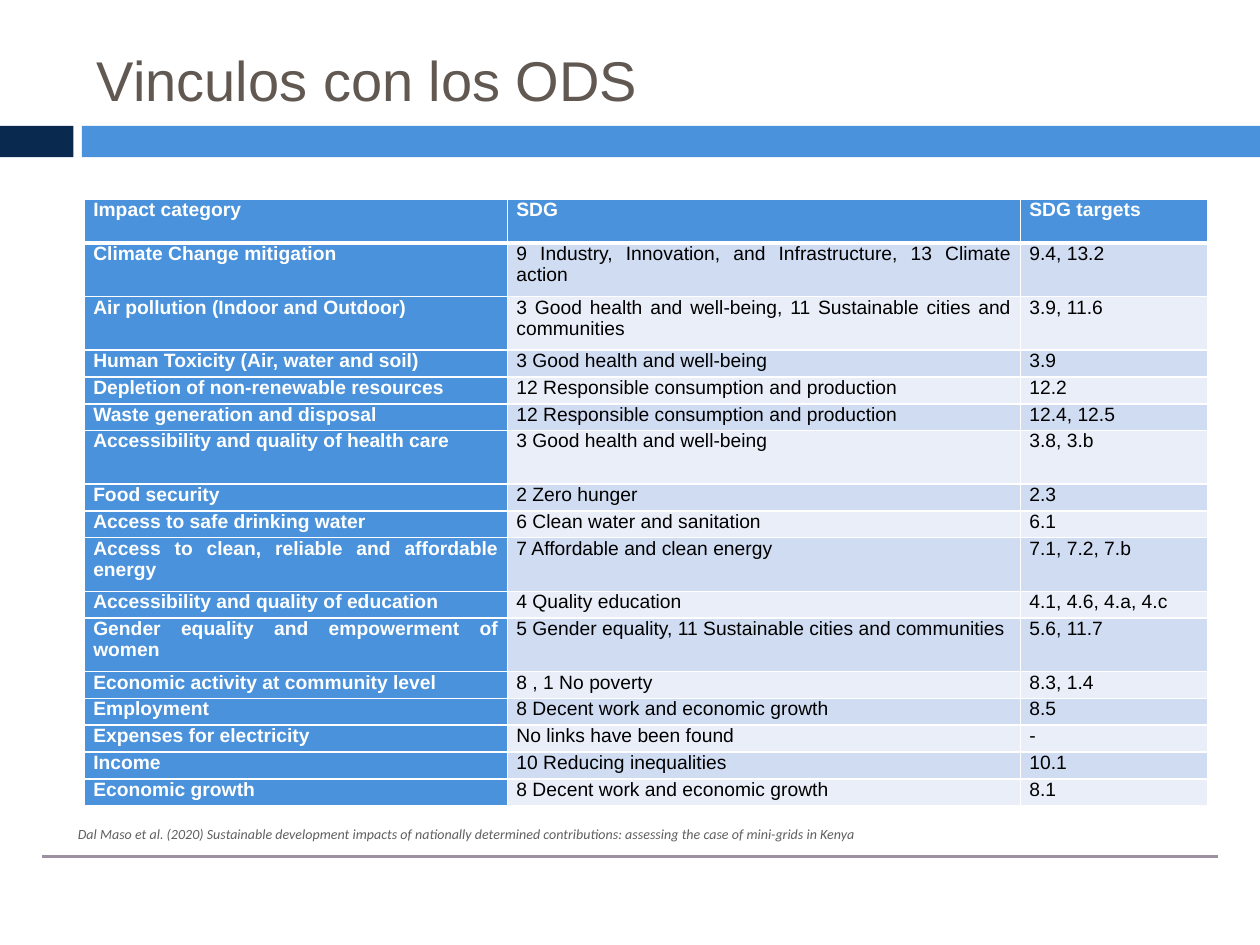
"""Build a slide that links impact categories to the SDGs and their targets."""
import pptx
import pptx.dml.color
import pptx.enum.shapes
import pptx.enum.text
import pptx.oxml
import pptx.oxml.ns
import pptx.util

Cm = pptx.util.Cm
Pt = pptx.util.Pt
Align = pptx.enum.text.PP_ALIGN
Fit = pptx.enum.text.MSO_AUTO_SIZE

hues = {
    "navy": "09294E", "blue": "4A92DB", "rule": "9D90A0", "title": "625852",
    "note": "5F5F5F", "white": "FFFFFF", "black": "000000",
    "odd": "D0DCF1", "even": "E9EEF8",
}


def tint(name):
    return pptx.dml.color.RGBColor.from_string(hues[name])


def write(frame, text, size=11, face="Arial", hue="black", bold=False,
          slant=False, align=Align.LEFT):
    frame.word_wrap = True
    para = frame.paragraphs[0]
    para.alignment = align
    run = para.add_run()
    run.text = text
    font = run.font
    font.size, font.name, font.bold, font.italic = Pt(size), face, bold, slant
    font.color.rgb = tint(hue)


deck = pptx.Presentation()
deck.slide_width, deck.slide_height = Cm(25.4), Cm(19.05)
slide = deck.slides.add_slide(deck.slide_layouts[5])
shapes = slide.shapes

for left, width, hue in [(0, 1.48, "navy"), (1.65, 23.75, "blue")]:
    bar = shapes.add_shape(pptx.enum.shapes.MSO_SHAPE.RECTANGLE,
                           Cm(left), Cm(2.54), Cm(width), Cm(0.63))
    bar.shadow.inherit = False
    bar.fill.solid()
    bar.fill.fore_color.rgb = tint(hue)
    bar.line.fill.background()

rule = shapes.add_connector(pptx.enum.shapes.MSO_CONNECTOR.STRAIGHT,
                            Cm(0.85), Cm(17.26), Cm(24.55), Cm(17.26))
rule.line.color.rgb = tint("rule")
rule.line.width = Pt(1.75)
rule._element.spPr.append(pptx.oxml.parse_xml(
    f'<a:effectLst {pptx.oxml.ns.nsdecls("a")}/>'))

title = shapes.title
title.left, title.top, title.width, title.height = Cm(1.7), Cm(0.79), Cm(22.65), Cm(1.63)
title.text_frame.auto_size = Fit.NONE
title.text_frame.vertical_anchor = pptx.enum.text.MSO_ANCHOR.MIDDLE
write(title.text_frame, "Vinculos con los ODS", size=32, hue="title")

rows = [
    ("Impact category", "SDG", "SDG targets"),
    ("Climate Change mitigation",
     "9 Industry, Innovation, and Infrastructure, 13 Climate action", "9.4, 13.2"),
    ("Air pollution (Indoor and Outdoor)",
     "3 Good health and well-being, 11 Sustainable cities and communities", "3.9, 11.6"),
    ("Human Toxicity (Air, water and soil)", "3 Good health and well-being", "3.9"),
    ("Depletion of non-renewable resources",
     "12 Responsible consumption and production", "12.2"),
    ("Waste generation and disposal",
     "12 Responsible consumption and production", "12.4, 12.5"),
    ("Accessibility and quality of health care", "3 Good health and well-being", "3.8, 3.b"),
    ("Food security", "2 Zero hunger", "2.3"),
    ("Access to safe drinking water", "6 Clean water and sanitation", "6.1"),
    ("Access to clean, reliable and affordable energy",
     "7 Affordable and clean energy", "7.1, 7.2, 7.b"),
    ("Accessibility and quality of education", "4 Quality education", "4.1, 4.6, 4.a, 4.c"),
    ("Gender equality and empowerment of women",
     "5 Gender equality, 11 Sustainable cities and communities", "5.6, 11.7"),
    ("Economic activity at community level", "8 , 1 No poverty", "8.3, 1.4"),
    ("Employment", "8 Decent work and economic growth", "8.5"),
    ("Expenses for electricity", "No links have been found", "-"),
    ("Income", "10 Reducing inequalities", "10.1"),
    ("Economic growth", "8 Decent work and economic growth", "8.1"),
]
tall = {1, 2, 6, 9, 11}
highs = [0.88] + [1.08 if r in tall else 0.54 for r in range(1, len(rows))]
wides = [8.53, 10.34, 3.78]

grid = shapes.add_table(len(rows), len(wides), Cm(1.7), Cm(4.02),
                        Cm(sum(wides)), Cm(sum(highs))).table
for col, wide in zip(grid.columns, wides):
    col.width = Cm(wide)
for r, row in enumerate(rows):
    grid.rows[r].height = Cm(highs[r])
    for c, text in enumerate(row):
        cell = grid.cell(r, c)
        head = r == 0 or c == 0
        cell.margin_left = cell.margin_right = Cm(0.18)
        cell.margin_top = cell.margin_bottom = 0
        for side in "LRTB":
            thick = 3 if (r, side) in [(0, "B"), (1, "T")] else 1
            cell._tc.get_or_add_tcPr().append(pptx.oxml.parse_xml(
                f'<a:ln{side} {pptx.oxml.ns.nsdecls("a")} w="{Pt(thick)}"><a:solidFill>'
                f'<a:srgbClr val="{hues["white"]}"/></a:solidFill></a:ln{side}>'))
        cell.fill.solid()
        cell.fill.fore_color.rgb = tint("blue" if head else "odd" if r % 2 else "even")
        write(cell.text_frame, text, hue="white" if head else "black",
              bold=head, align=Align.JUSTIFY)

note = shapes.add_textbox(Cm(1.32), Cm(16.51), Cm(17.73), Cm(0.6)).text_frame
note.auto_size = Fit.SHAPE_TO_FIT_TEXT
write(note, "Dal Maso et al. (2020) Sustainable development impacts of nationally "
      "determined contributions: assessing the case of mini-grids in Kenya",
      size=8, face="Calibri", hue="note", slant=True)

deck.save("out.pptx")
